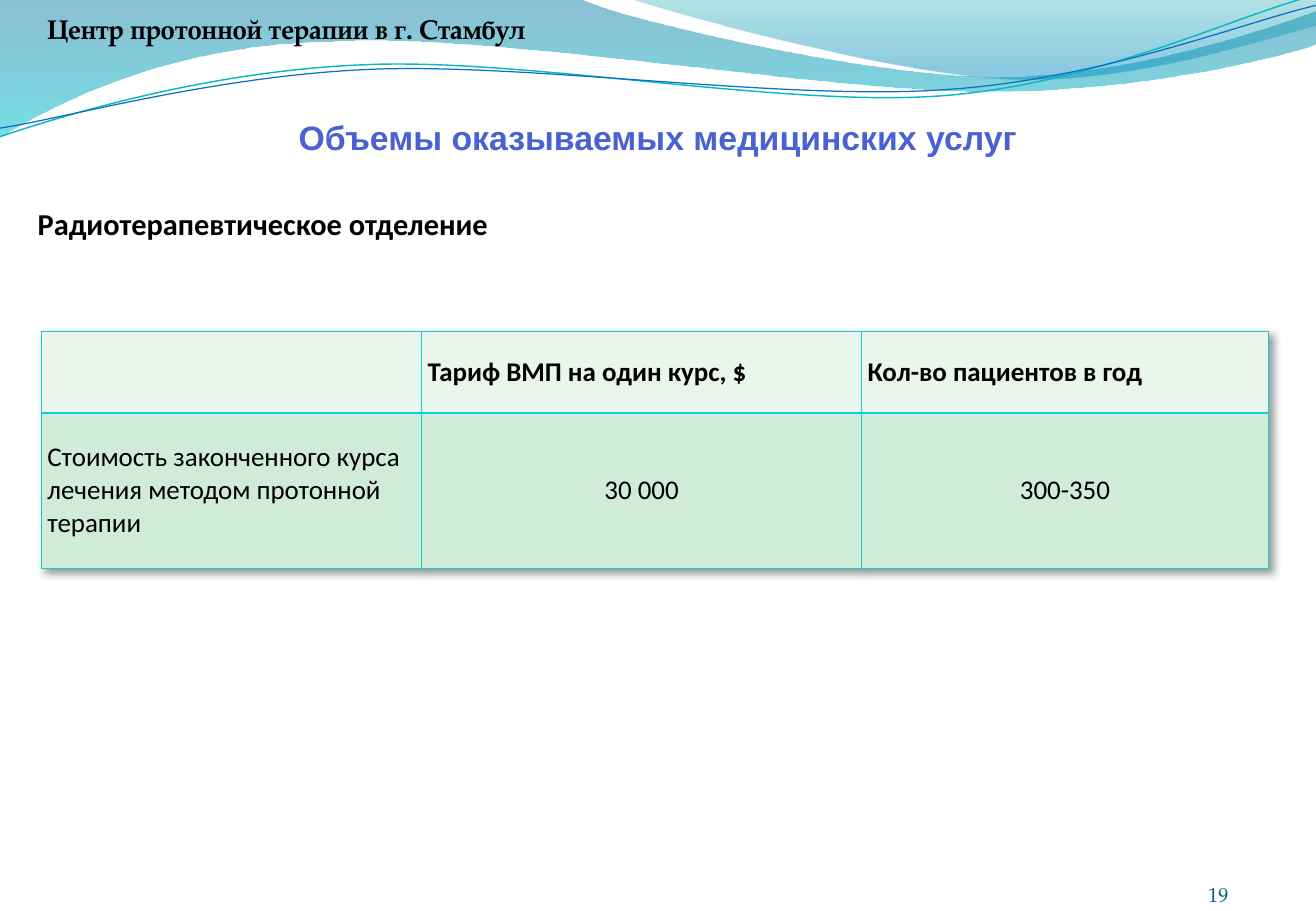
from lxml import etree
from pptx import Presentation
from pptx.dml.color import RGBColor
from pptx.enum.text import MSO_ANCHOR, MSO_AUTO_SIZE, PP_ALIGN
from pptx.oxml import parse_xml
from pptx.oxml.ns import nsdecls, qn
from pptx.util import Pt

PX = 9144
SLIDE_W, SLIDE_H = 1083, 750
STRAND_TILT = -2.7
SIDES = ("left", "top", "right", "bottom")
LEFT, CENTER, RIGHT = PP_ALIGN.LEFT, PP_ALIGN.CENTER, PP_ALIGN.RIGHT
MIDDLE, BOTTOM, TOP = MSO_ANCHOR.MIDDLE, MSO_ANCHOR.BOTTOM, MSO_ANCHOR.TOP
FIT_SHAPE = MSO_AUTO_SIZE.SHAPE_TO_FIT_TEXT

BLACK = RGBColor(0x00, 0x00, 0x00)
TITLE_BLUE = RGBColor(0x4A, 0x61, 0xD2)
NUMBER_TEAL = RGBColor(0x04, 0x5D, 0x75)
HEADER_GREEN = RGBColor(0xE9, 0xF6, 0xEC)
BODY_GREEN = RGBColor(0xD0, 0xEC, 0xD8)
BORDER_CYAN = RGBColor(0x0B, 0xD0, 0xD9)
LINE_TEAL = RGBColor(0x0A, 0xB8, 0xBF)
LINE_BLUE = RGBColor(0x0F, 0x6F, 0xC6)
WAVE_BLUE = RGBColor(0x00, 0x74, 0xA1)
WAVE_CYAN = RGBColor(0x00, 0xC6, 0xCF)
CREST_TEAL = RGBColor(0x00, 0xA1, 0xA9)
CREST_BLUE = RGBColor(0x00, 0x8B, 0xBF)

SERIF, SANS, BODY_FONT = "TeX Gyre Pagella", "Arial", "Calibri"

WAVES = [
    ([(0, 0), (477, -1), (515, 17, 719, 63, 822, 63), (924, 63, 1038, 26, 1083, 9),
      (1084, 36), (1065, 44, 942, 76, 808, 75), (674, 75, 414, 28, 279, 34),
      (140, 36, 50, 83, -1, 113)],
     [(0, WAVE_BLUE, 45), (1, WAVE_CYAN, 55)]),
    ([(519, -1), (552, 11, 739, 62, 833, 65), (927, 69, 1042, 32, 1083, 21), (1083, 0)],
     [(0, CREST_TEAL, 30), (0.8, CREST_BLUE, 45)]),
]
STRANDS = [
    ([(-2, 87), (51, 72, 171, 41, 300, 42), (429, 42, 640, 93, 771, 90),
      (901, 87, 1019, 35, 1083, 22)], LINE_TEAL, 0.85),
    ([(-2, 80), (50, 75, 177, 45, 307, 46), (436, 47, 646, 88, 775, 85),
      (905, 83, 1021, 42, 1085, 30)], LINE_BLUE, 0.75),
]
COLUMNS, ROWS = [313, 362, 335], [67, 128]
TARIFFS = [
    ["", "Тариф ВМП на один курс, $", "Кол-во пациентов в год"],
    ["Стоимость законченного курса лечения методом протонной терапии", "30 000", "300-350"],
]


def draw_outline(slide, segments, box, closed):
    """Draw corners and cubic curves, offset to the box, without a shadow."""
    points = [((box[0] + x) * PX, (box[1] + y) * PX)
              for segment in segments for x, y in zip(segment[::2], segment[1::2])]
    builder = slide.shapes.build_freeform(*points[0], scale=1.0)
    builder.add_line_segments(points[1:], close=closed)
    outline = builder.convert_to_shape()
    outline.shadow.inherit = False
    steps = iter(list(outline.element.iter(qn("a:lnTo"))))
    for segment in segments[1:]:
        first = next(steps)
        if len(segment) == 6:
            curve = etree.Element(qn("a:cubicBezTo"))
            first.addprevious(curve)
            for step in (first, next(steps), next(steps)):
                curve.append(step[0])
                step.getparent().remove(step)
    return outline


def draw_banner(slide, box):
    """Draw the translucent waves and thin strands across the top."""
    for segments, stops in WAVES:
        wave = draw_outline(slide, segments, box, True)
        wave.line.fill.background()
        wave.fill.gradient()
        wave.fill.gradient_angle = 270
        for stop, (position, color, _) in zip(wave.fill.gradient_stops, stops):
            stop.position, stop.color.rgb = position, color
        tints = wave.element.spPr.iter(qn("a:srgbClr"))
        for tint, (_, _, opacity) in zip(tints, stops):
            etree.SubElement(tint, qn("a:alpha"), val=str(opacity * 1000))
    for segments, color, width in STRANDS:
        strand = draw_outline(slide, segments, box, False)
        strand.rotation = STRAND_TILT
        strand.fill.background()
        strand.line.color.rgb = color
        strand.line.width = Pt(width)


def write_text(frame, text, size, font, color=BLACK, bold=True, align=LEFT, spacing=None):
    """Fill a text frame with one formatted paragraph."""
    paragraph = frame.paragraphs[0]
    paragraph.alignment, paragraph.line_spacing = align, spacing
    run = paragraph.add_run()
    run.text = text
    run.font.color.rgb = color
    for name, value in {"size": Pt(size), "name": font, "bold": bold}.items():
        setattr(run.font, name, value)


def add_label(slide, box, text, size, font, anchor=MIDDLE, inset=5, fit=FIT_SHAPE, **style):
    """Place a wrapped line of text in its box."""
    frame = slide.shapes.add_textbox(*(length * PX for length in box)).text_frame
    settings = {"word_wrap": True, "auto_size": fit, "vertical_anchor": anchor}
    settings.update({f"margin_{side}": inset * PX for side in SIDES})
    for name, value in settings.items():
        setattr(frame, name, value)
    write_text(frame, text, size, font, **style)


def border_cell(cell):
    """Give a cell thin cyan borders on all sides."""
    properties = cell._tc.get_or_add_tcPr()
    for index, side in enumerate(("lnL", "lnR", "lnT", "lnB")):
        properties.insert(index, parse_xml(
            f'<a:{side} {nsdecls("a")} w="12700"><a:solidFill>'
            f'<a:srgbClr val="{BORDER_CYAN}"/></a:solidFill></a:{side}>'))


def add_tariffs(slide, box):
    """Build the shadowed table of tariffs and patient numbers."""
    table = slide.shapes.add_table(len(ROWS), len(COLUMNS), *(length * PX for length in box)).table
    table.first_row = table.horz_banding = False
    table._tbl.tblPr.insert(0, parse_xml(
        f'<a:effectLst {nsdecls("a")}><a:outerShdw blurRad="50800" dist="38100" dir="2700000" '
        'algn="tl" rotWithShape="0"><a:srgbClr val="000000"><a:alpha val="40000"/></a:srgbClr>'
        '</a:outerShdw></a:effectLst>'))
    for column, width in zip(table.columns, COLUMNS):
        column.width = width * PX
    for r, (height, texts) in enumerate(zip(ROWS, TARIFFS)):
        table.rows[r].height = height * PX
        for c, text in enumerate(texts):
            cell = table.cell(r, c)
            cell.vertical_anchor = MIDDLE
            for side in SIDES:
                setattr(cell, f"margin_{side}", 5 * PX)
            cell.fill.solid()
            cell.fill.fore_color.rgb = BODY_GREEN if r else HEADER_GREEN
            border_cell(cell)
            if text:
                write_text(cell.text_frame, text, 16, BODY_FONT, bold=r == 0,
                           align=CENTER if r and c else LEFT)


def build_slide(slide, box):
    """Lay out the banner, headings, table and slide number."""
    left, top, width, height = box
    draw_banner(slide, box)
    add_label(slide, (left + width - 102, top + height - 33, 30, 29), "19", 12, SERIF,
              anchor=BOTTOM, inset=0, fit=None, color=NUMBER_TEAL, bold=False, align=RIGHT)
    add_tariffs(slide, (left + 34, top + 273, sum(COLUMNS), sum(ROWS)))
    add_label(slide, (left + 26, top + 164, 779, 41), "Радиотерапевтическое отделение",
              18, BODY_FONT, anchor=TOP)
    add_label(slide, (left + 34, top, width - 34, 42), "Центр протонной терапии в г. Стамбул",
              16, SERIF, spacing=1.2)
    add_label(slide, (left, top + 94, width, 41), "Объемы оказываемых медицинских услуг",
              20, SANS, color=TITLE_BLUE, align=CENTER, spacing=0.9)


def main():
    """Create the presentation and save it."""
    deck = Presentation()
    deck.slide_width, deck.slide_height = SLIDE_W * PX, SLIDE_H * PX
    build_slide(deck.slides.add_slide(deck.slide_layouts[6]), (0, 0, SLIDE_W, SLIDE_H))
    deck.save("out.pptx")


if __name__ == "__main__":
    main()
